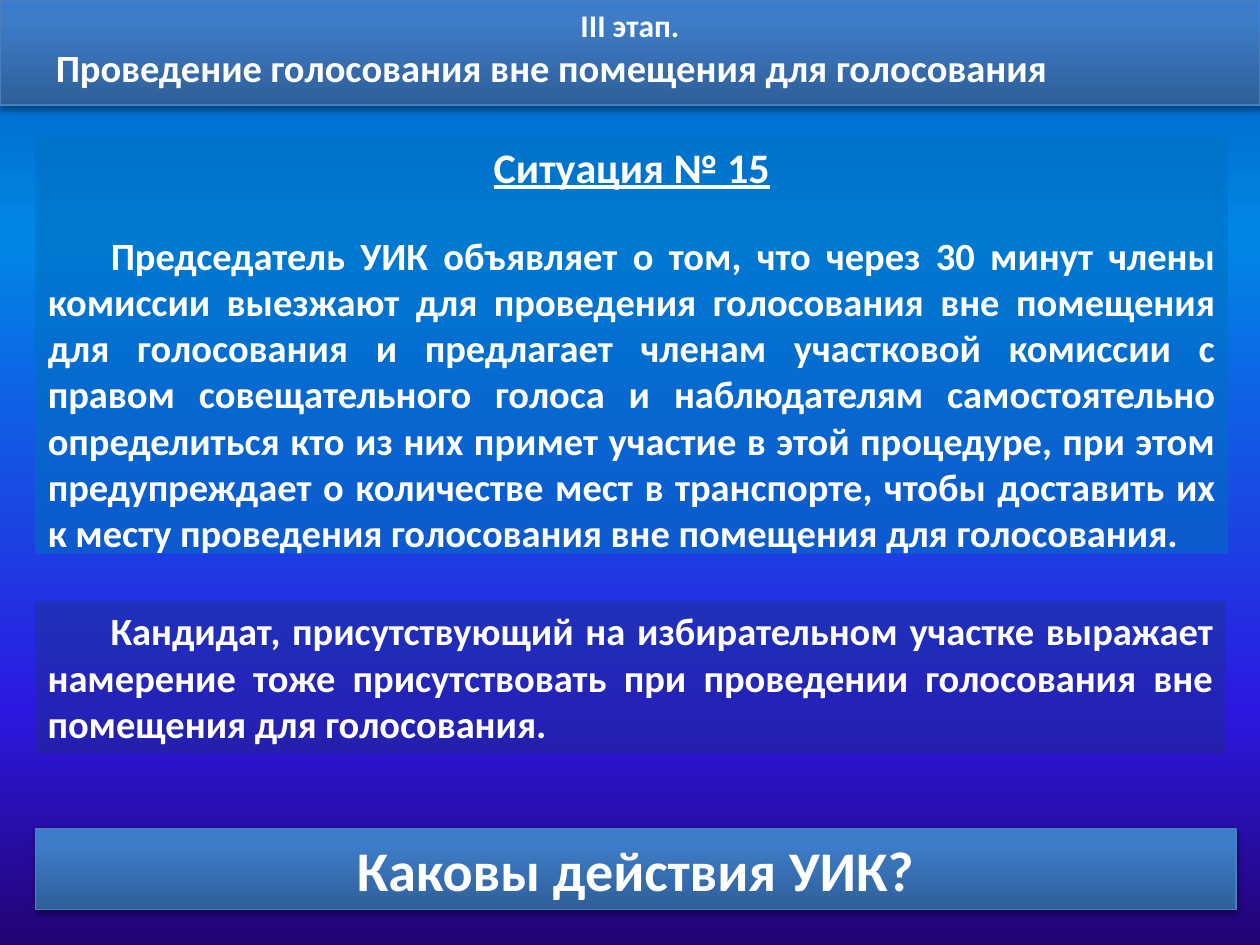
from dataclasses import dataclass

from lxml import etree
from pptx import Presentation
from pptx.dml.color import RGBColor
from pptx.enum.shapes import MSO_SHAPE
from pptx.enum.text import MSO_ANCHOR, MSO_AUTO_SIZE, PP_ALIGN
from pptx.oxml.ns import qn
from pptx.util import Cm, Pt

RECTANGLE = MSO_SHAPE.RECTANGLE
TOP = MSO_ANCHOR.TOP
GROW = MSO_AUTO_SIZE.SHAPE_TO_FIT_TEXT
LEFT, CENTER, JUSTIFY = PP_ALIGN.LEFT, PP_ALIGN.CENTER, PP_ALIGN.JUSTIFY


@dataclass(frozen=True)
class Theme:
    font: str = "Calibri"
    text: str = "FFFFFF"
    edge: str = "4B7EBC"
    shadow: str = "000000"
    situation: str = "0070C0"
    request: str = "17375E"
    backdrop: tuple = ((0, "230373"), (25, "2C19E1"), (75, "0087E6"), (100, "005CBF"))
    banner: tuple = ((0, "2F5F99"), (80, "3D7CC7"), (100, "3A7CCB"))
    stage_size: int = 18
    body_size: int = 22
    heading_size: int = 24
    question_size: int = 32


def add_color(parent, color, alpha=None):
    node = etree.SubElement(parent, qn("a:srgbClr"), val=color)
    if alpha is not None:
        etree.SubElement(node, qn("a:alpha"), val=str(alpha * 1000))


class SlideBuilder:
    def __init__(self, slide, theme):
        self.slide = slide
        self.theme = theme

    def gradient(self, fill, element, stops):
        """Fill from bottom to top; stops are (percent, colour) pairs."""
        fill.gradient()
        fill.gradient_angle = 90
        stop_list = element.find(".//" + qn("a:gsLst"))
        for stop in list(stop_list):
            stop_list.remove(stop)
        for percent, color in stops:
            add_color(etree.SubElement(stop_list, qn("a:gs"), pos=str(percent * 1000)), color)

    def backdrop(self):
        self.gradient(self.slide.background.fill, self.slide.element, self.theme.backdrop)

    def rectangle(self):
        return self.slide.shapes.add_shape(RECTANGLE, 0, 0, 0, 0)

    def place(self, box, left, top, width, height):
        for side, length in dict(left=left, top=top, width=width, height=height).items():
            setattr(box, side, Cm(length))
        box.shadow.inherit = False

    def banner(self, box, bounds, paragraphs):
        """Gradient box with a thin edge and a soft shadow below."""
        self.place(box, *bounds)
        self.gradient(box.fill, box.element, self.theme.banner)
        box.line.color.rgb = RGBColor.from_string(self.theme.edge)
        box.line.width = Pt(0.75)
        effects = box.element.spPr.find(qn("a:effectLst"))
        shadow = etree.SubElement(effects, qn("a:outerShdw"), blurRad=str(Pt(3.1)),
                                  dist=str(Pt(1.8)), dir="5400000", rotWithShape="0")
        add_color(shadow, self.theme.shadow, 35)
        self.fill_text(box, paragraphs)

    def panel(self, box, bounds, color, opacity, paragraphs):
        """Translucent box without an edge."""
        self.place(box, *bounds)
        box.fill.solid()
        box.fill.fore_color.rgb = RGBColor.from_string(color)
        tint = box.element.spPr.find(".//" + qn("a:srgbClr"))
        etree.SubElement(tint, qn("a:alpha"), val=str(opacity * 1000))
        box.line.fill.background()
        self.fill_text(box, paragraphs)

    def fill_text(self, box, paragraphs):
        """Each paragraph is (text, size, alignment, first indent in cm, points before, underline)."""
        frame = box.text_frame
        frame_format = dict(word_wrap=True, auto_size=GROW, vertical_anchor=TOP)
        for name, value in frame_format.items():
            setattr(frame, name, value)
        for number, (text, size, alignment, indent, before, underline) in enumerate(paragraphs):
            paragraph = frame.add_paragraph() if number else frame.paragraphs[0]
            paragraph.alignment = alignment
            paragraph.space_before = Pt(before)
            properties = paragraph._p.get_or_add_pPr()
            properties.set("marL", "0")
            properties.set("indent", str(Cm(indent)))
            etree.SubElement(properties, qn("a:buNone"))
            run = paragraph.add_run()
            run.text = text
            font_format = dict(name=self.theme.font, size=Pt(size), bold=True, underline=underline)
            for name, value in font_format.items():
                setattr(run.font, name, value)
            run.font.color.rgb = RGBColor.from_string(self.theme.text)


def main():
    theme = Theme()
    deck = Presentation()
    deck.slide_width, deck.slide_height = Cm(25.4), Cm(19.05)
    slide = deck.slides.add_slide(deck.slide_layouts[1])
    builder = SlideBuilder(slide, theme)
    margin = 0.71
    first_line = 1.27

    builder.backdrop()
    builder.banner(slide.shapes.title, (0, 0, 25.4, 1.96), [
        ("III этап.", theme.stage_size, CENTER, 0, 0, False),
        ("Проведение голосования вне помещения для голосования",
         theme.body_size, LEFT, 0.87, 0, False),
    ])
    builder.panel(slide.placeholders[1], (margin, 2.72, 24.05, 8.69), theme.situation, 55, [
        ("Ситуация № 15", theme.heading_size, CENTER, 0, 6, True),
        ("Председатель УИК объявляет о том, что через 30 минут члены комиссии выезжают "
         "для проведения голосования вне помещения для голосования и предлагает членам "
         "участковой комиссии с правом совещательного голоса и наблюдателям самостоятельно "
         "определиться кто из них примет участие в этой процедуре, при этом предупреждает "
         "о количестве мест в транспорте, чтобы доставить их к месту проведения "
         "голосования вне помещения для голосования.",
         theme.body_size, JUSTIFY, first_line, 23, False),
    ])
    builder.panel(builder.rectangle(), (margin, 12.12, 24, 3.07), theme.request, 30, [
        ("Кандидат, присутствующий на избирательном участке выражает намерение тоже "
         "присутствовать при проведении голосования вне помещения для голосования.",
         theme.body_size, JUSTIFY, first_line, 0, False),
    ])
    builder.banner(builder.rectangle(), (margin, 16.71, 24.21, 1.63), [
        ("Каковы действия УИК?", theme.question_size, CENTER, 0, 0, False),
    ])
    deck.save("out.pptx")


if __name__ == "__main__":
    main()
